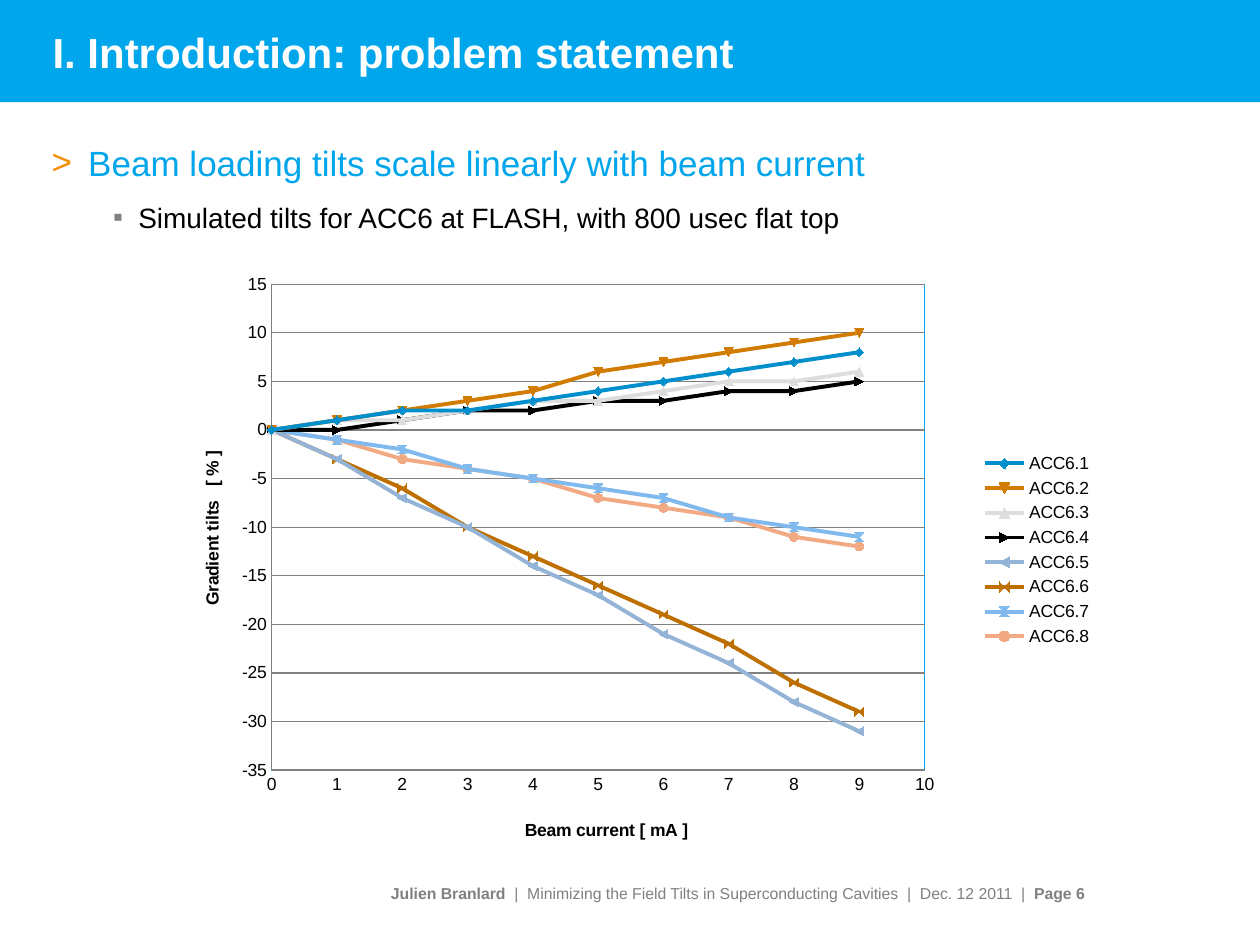
from lxml import etree
from pptx import Presentation
from pptx.chart.data import XyChartData
from pptx.dml.color import RGBColor
from pptx.enum.chart import (XL_AXIS_CROSSES as CROSSES, XL_CHART_TYPE as CT,
                             XL_LEGEND_POSITION as LEG, XL_TICK_MARK as TICK,
                             XL_TICK_LABEL_POSITION as LABELS)
from pptx.enum.shapes import MSO_SHAPE as SHAPE
from pptx.enum.text import MSO_ANCHOR as ANCHOR, PP_ALIGN as ALIGN
from pptx.oxml import parse_xml
from pptx.oxml.ns import nsdecls, qn
from pptx.util import Cm, Pt


def add_text(p, text, size, color, bold=False):
    r = p.add_run()
    r.text = text
    for name, value in dict(name="Arial", size=Pt(size), bold=bold).items():
        setattr(r.font, name, value)
    r.font.color.rgb = RGBColor.from_string(color)


def set_layout(parent, index, **places):
    """Fix a chart part at fractions of the chart; index is the layout's place in parent."""
    for old in parent.findall(qn("c:layout")):
        parent.remove(old)
    layout = parse_xml(f'<c:layout {nsdecls("c")}><c:manualLayout/></c:layout>')
    for tag, value in places.items():
        etree.SubElement(layout[0], qn(f"c:{tag}"), val=str(value))
    parent.insert(index, layout)


prs = Presentation()
prs.slide_width, prs.slide_height = Cm(25.4), Cm(19.05)
s = prs.slides.add_slide(prs.slide_layouts[6])

# Header band
band = s.shapes.add_shape(SHAPE.RECTANGLE, 0, 0, prs.slide_width, Cm(2.06))
band.shadow.inherit = False
band.fill.solid()
band.fill.fore_color.rgb = RGBColor.from_string("00A6EB")
band.line.fill.background()

# Text boxes: title, body, footer
frames = []
for left, top, width, height, anchor in [
    (0.81, 0.28, 23.67, 1.52, ANCHOR.MIDDLE),
    (0.79, 2.72, 23.67, 13.31, ANCHOR.TOP),
    (0.79, 17.45, 21.08, 1.12, ANCHOR.MIDDLE),
]:
    tf = s.shapes.add_textbox(Cm(left), Cm(top), Cm(width), Cm(height)).text_frame
    tf.word_wrap = True
    tf.vertical_anchor = anchor
    frames.append(tf)
title, body, footer = frames

add_text(title.paragraphs[0], "I. Introduction: problem statement", 24, "FFFFFF", True)

bullets = [
    ("Beam loading tilts scale linearly with beam current", 20, "00A5EB",
     ">", "F28E00", 0.74, 0.74),
    ("Simulated tilts for ACC6 at FLASH, with 800 usec flat top", 16, "000000",
     "▪", "808080", 1.75, 0.51),
]
for i, (text, size, color, mark, mark_color, margin, hang) in enumerate(bullets):
    p = body.add_paragraph() if i else body.paragraphs[0]
    p.level = i
    p.space_after = Pt(size / 2)
    pPr = p._p.get_or_add_pPr()
    pPr.set("marL", str(Cm(margin)))
    pPr.set("indent", str(-Cm(hang)))
    clr = etree.SubElement(pPr, qn("a:buClr"))
    etree.SubElement(clr, qn("a:srgbClr"), val=mark_color)
    etree.SubElement(pPr, qn("a:buFont"), typeface="Arial")
    etree.SubElement(pPr, qn("a:buChar"), char=mark)
    add_text(p, text, size, color)

footer.margin_right = 0
p = footer.paragraphs[0]
p.alignment = ALIGN.RIGHT
for text, bold in [
    ("Julien Branlard  ", True),
    ("|  Minimizing the Field Tilts in Superconducting Cavities  |  Dec. 12 2011  |  ", False),
    ("Page 6", True),
]:
    add_text(p, text, 9, "808080", bold)

# Chart: gradient tilt in % at beam currents of 0 to 9 mA
lines = [
    ("ACC6.1", "008FCC", (0, 1, 2, 2, 3, 4, 5, 6, 7, 8)),
    ("ACC6.2", "D17B00", (0, 1, 2, 3, 4, 6, 7, 8, 9, 10)),
    ("ACC6.3", "DDDDDD", (0, 1, 1, 2, 3, 3, 4, 5, 5, 6)),
    ("ACC6.4", "000000", (0, 0, 1, 2, 2, 3, 3, 4, 4, 5)),
    ("ACC6.5", "93B3D7", (0, -3, -7, -10, -14, -17, -21, -24, -28, -31)),
    ("ACC6.6", "BD6F00", (0, -3, -6, -10, -13, -16, -19, -22, -26, -29)),
    ("ACC6.7", "7FB9EE", (0, -1, -2, -4, -5, -6, -7, -9, -10, -11)),
    ("ACC6.8", "F2AA84", (0, -1, -3, -4, -5, -7, -8, -9, -11, -12)),
]
data = XyChartData()
for name, _, tilts in lines:
    series = data.add_series(name)
    for current, tilt in enumerate(tilts):
        series.add_data_point(current, tilt)

chart = s.shapes.add_chart(CT.XY_SCATTER_SMOOTH, Cm(3.61), Cm(5), Cm(18.67), Cm(12.17),
                           data).chart
chart.has_title = False
chart.font.name, chart.font.size = "Arial", Pt(10)
chart.font.color.rgb = RGBColor.from_string("000000")
chart.has_legend = True
chart.legend.position = LEG.RIGHT
chart.legend.include_in_layout = False

for series, (_, color, _) in zip(chart.plots[0].series, lines):
    series.smooth = True
    series.format.line.width = Pt(2.25)
    series.format.line.color.rgb = RGBColor.from_string(color)
    series.marker.size = 5

gray = RGBColor.from_string("808080")
for axis, text, low, high, step, grid, x, y in [
    (chart.category_axis, "Beam current [ mA ]", 0, 10, 1, False, 0.37, 0.94),
    (chart.value_axis, "Gradient tilts   [ % ]", -35, 15, 5, True, 0.02, 0.33),
]:
    settings = dict(minimum_scale=low, maximum_scale=high, major_unit=step,
                    has_major_gridlines=grid, major_tick_mark=TICK.NONE,
                    minor_tick_mark=TICK.NONE, tick_label_position=LABELS.NEXT_TO_AXIS,
                    crosses=CROSSES.MINIMUM)
    for name, value in settings.items():
        setattr(axis, name, value)
    axis.tick_labels.number_format = "General"
    axis.tick_labels.number_format_is_linked = False
    axis.format.line.color.rgb = gray
    add_text(axis.axis_title.text_frame.paragraphs[0], text, 10, "000000", True)
    set_layout(axis.axis_title._element, 1, xMode="edge", yMode="edge", x=x, y=y)
chart.value_axis.major_gridlines.format.line.color.rgb = gray

# Fixed inner plot area with a blue frame
plot_area = chart._chartSpace.chart.plotArea
set_layout(plot_area, 0, layoutTarget="inner", xMode="edge", yMode="edge",
           x=0.1, y=0.06, w=0.705, h=0.805)
plot_area.append(parse_xml(
    f'<c:spPr {nsdecls("c", "a")}><a:noFill/><a:ln w="9525"><a:solidFill>'
    '<a:srgbClr val="00A5EB"/></a:solidFill></a:ln></c:spPr>'))

prs.save("out.pptx")
